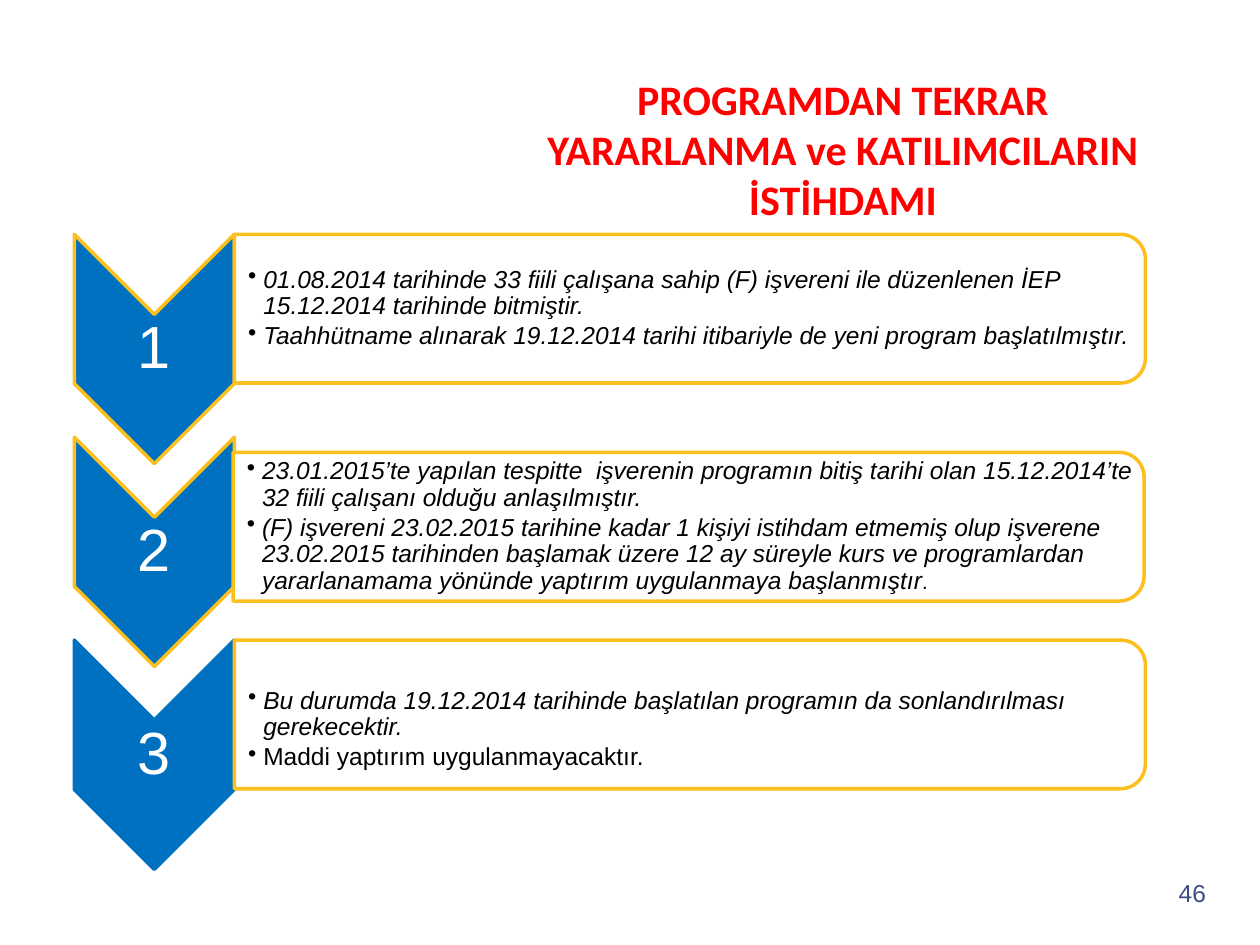
import lxml.etree
import pptx
import pptx.dml.color
import pptx.enum.shapes
import pptx.enum.text
import pptx.oxml.ns
import pptx.util

Inches, Pt = pptx.util.Inches, pptx.util.Pt
SHAPE = pptx.enum.shapes.MSO_SHAPE
ALIGN = pptx.enum.text.PP_ALIGN
ANCHOR = pptx.enum.text.MSO_ANCHOR
qn = pptx.oxml.ns.qn

COLORS = {"title": "FF0000", "blue": "0070C0", "gold": "FBC01E",
          "white": "FFFFFF", "text": "000000", "number": "3D4E84"}

TITLE = "PROGRAMDAN TEKRAR YARARLANMA ve KATILIMCILARIN İSTİHDAMI"
PAGE = "46"

# Each bullet is a list of runs: (text, format changes)
STEPS = [
    {"bar": (1.86, 1.86), "text_shift": 0, "outline": "gold", "bullets": [
        [("01.08.2014 tarihinde 33 fiili çalışana sahip (F) işvereni ile düzenlenen İEP "
          "15.12.2014 tarihinde bitmiştir.", {})],
        [("Taahhütname alınarak 19.12.2014 tarihi itibariyle de yeni program "
          "başlatılmıştır.", {})]]},
    {"bar": (1.85, 3.59), "text_shift": 0, "outline": "gold", "bullets": [
        [("23.01.2015’te yapılan tespitte  işverenin programın bitiş tarihi olan "
          "15.12.2014’te 32 fiili çalışanı olduğu anlaşılmıştır.", {})],
        [("(F) işvereni 23.02.2015 tarihine kadar 1 kişiyi istihdam etmemiş olup işverene "
          "23.02.2015 tarihinden başlamak üzere 12 ay süreyle kurs ve programlardan "
          "yararlanamama yönünde yaptırım uygulanmaya başlanmıştır", {}),
         (".", {"size": Pt(12)})]]},
    {"bar": (1.86, 5.08), "text_shift": 0.12, "outline": "blue", "bullets": [
        [("Bu durumda 19.12.2014 tarihinde başlatılan programın da sonlandırılması "
          "gerekecektir.", {})],
        [("Maddi yaptırım uygulanmayacaktır.", {"italic": False})]]},
]

# Geometry in inches
CHEVRON_LEFT, CHEVRON_TOP, CHEVRON_W, CHEVRON_H = 0.59, 1.86, 1.27, 1.82
STEP_PITCH = 1.61
BAR_W, BAR_H = 7.23, 1.18
TEXT_W, TEXT_H = 7.17, 1.07
LABEL_H = 0.55

BODY = {"name": "Arial", "size": Pt(14), "italic": True}
LABEL = {"name": "Arial", "size": Pt(34)}


def rgb(key):
    return pptx.dml.color.RGBColor.from_string(COLORS[key])


def add_run(p, text, color, fmt):
    r = p.add_run()
    r.text = text
    for name, value in fmt.items():
        setattr(r.font, name, value)
    r.font.color.rgb = rgb(color)


def add_turned(slide, kind, left, top, width, height, fill, line):
    """Add a shape turned a quarter right that covers the given area."""
    dx = (width - height) / 2
    sp = slide.shapes.add_shape(kind, Inches(left + dx), Inches(top - dx),
                                Inches(height), Inches(width))
    sp.rotation = 90
    sp.shadow.inherit = False
    sp.fill.solid()
    sp.fill.fore_color.rgb = rgb(fill)
    sp.line.color.rgb = rgb(line)
    sp.line.width = Pt(2)
    return sp


def add_text(slide, left, top, width, height, insets, anchor):
    sp = slide.shapes.add_textbox(*map(Inches, (left, top, width, height)))
    tf = sp.text_frame
    tf.word_wrap = True
    tf.vertical_anchor = anchor
    for side, inset in zip(("left", "top", "right", "bottom"), insets):
        setattr(tf, "margin_" + side, Inches(inset))
    return tf


def add_bullet(p):
    pPr = p._p.get_or_add_pPr()
    pPr.set("marL", str(Inches(0.12)))
    pPr.set("indent", str(-Inches(0.12)))
    lxml.etree.SubElement(pPr, qn("a:buChar")).set("char", "•")


def add_step(slide, i, step):
    # Numbered chevron
    top = CHEVRON_TOP + i * STEP_PITCH
    add_turned(slide, SHAPE.CHEVRON, CHEVRON_LEFT, top, CHEVRON_W, CHEVRON_H,
               "blue", step["outline"])
    tf = add_text(slide, CHEVRON_LEFT, top + (CHEVRON_H - LABEL_H) / 2, CHEVRON_W,
                  LABEL_H, [0.02] * 4, ANCHOR.MIDDLE)
    p = tf.paragraphs[0]
    p.alignment = ALIGN.CENTER
    p.line_spacing = 0.9
    add_run(p, str(i + 1), "white", LABEL)

    # Bar with the right corners rounded
    left, top = step["bar"]
    bar = add_turned(slide, SHAPE.ROUND_2_SAME_RECTANGLE, left, top, BAR_W, BAR_H,
                     "white", "gold")
    color = bar.fill._xPr.find(".//" + qn("a:srgbClr"))
    lxml.etree.SubElement(color, qn("a:alpha")).set("val", "90000")

    # Bullets
    tf = add_text(slide, left, top + (BAR_H - TEXT_H) / 2 + step["text_shift"],
                  TEXT_W, TEXT_H, (0.11, 0.01, 0.01, 0.01), ANCHOR.MIDDLE)
    for n, runs in enumerate(step["bullets"]):
        p = tf.add_paragraph() if n else tf.paragraphs[0]
        add_bullet(p)
        p.line_spacing = 0.9
        p.space_after = Pt(2)
        for text, changes in runs:
            add_run(p, text, "text", {**BODY, **changes})


def main():
    prs = pptx.Presentation()
    prs.slide_width, prs.slide_height = Inches(10), Inches(7.5)
    slide = prs.slides.add_slide(prs.slide_layouts[5])

    # Title
    title = slide.shapes.title
    title.left, title.top, title.width, title.height = map(Inches, (4.21, 0.84, 4.96, 0.68))
    tf = title.text_frame
    tf.auto_size = pptx.enum.text.MSO_AUTO_SIZE.NONE
    tf.vertical_anchor = ANCHOR.MIDDLE
    tf.paragraphs[0].alignment = ALIGN.CENTER
    add_run(tf.paragraphs[0], TITLE, "title",
            {"name": "Calibri", "size": Pt(24), "bold": True})

    for i, step in enumerate(STEPS):
        add_step(slide, i, step)

    # Page number
    tf = add_text(slide, 9.1, 6.92, 0.57, 0.5, (0.1, 0.05, 0.1, 0.05), ANCHOR.TOP)
    tf.paragraphs[0].alignment = ALIGN.RIGHT
    add_run(tf.paragraphs[0], PAGE, "number", {"name": "Arial", "size": Pt(14)})

    prs.save("out.pptx")


if __name__ == "__main__":
    main()
